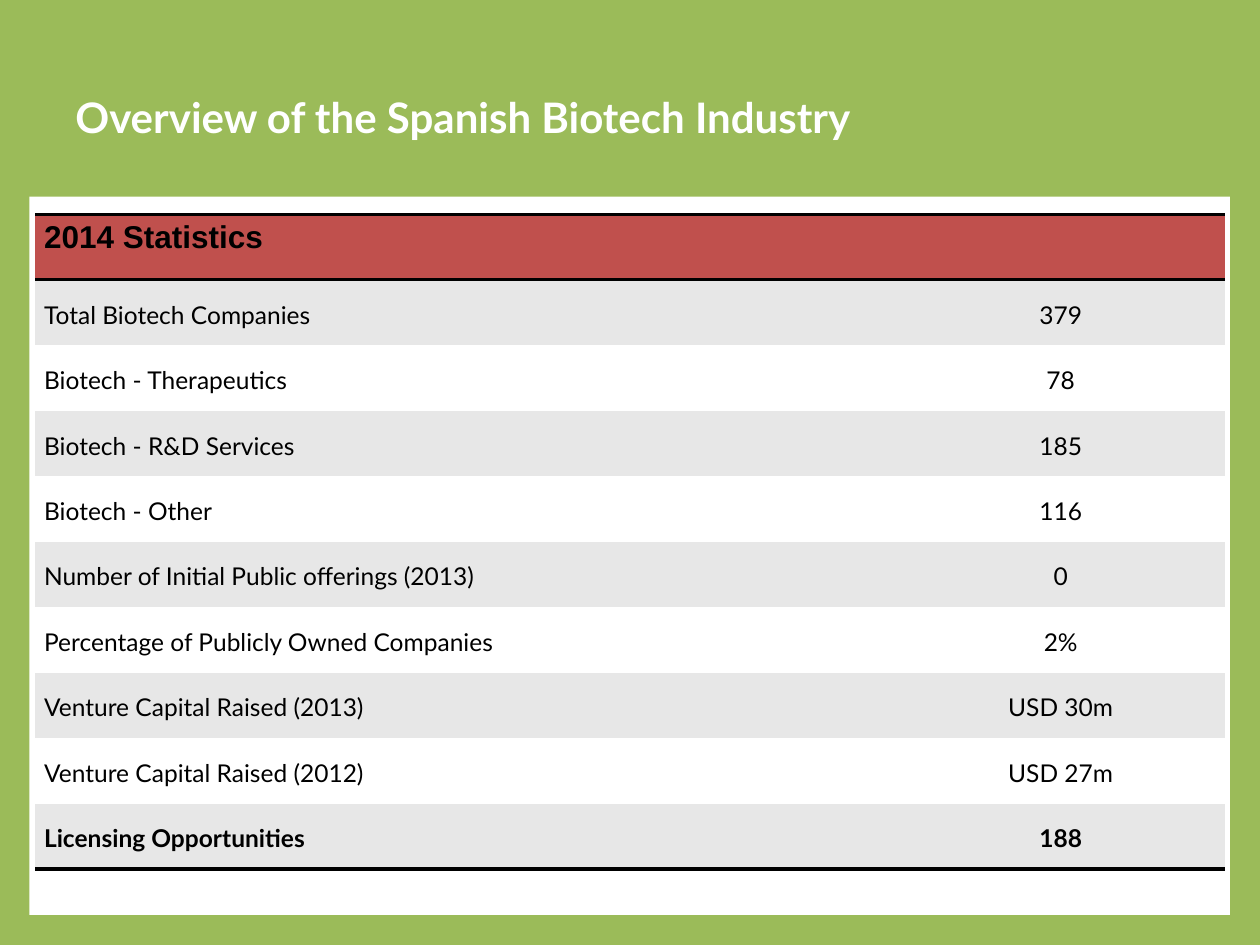
from dataclasses import dataclass

from lxml.etree import SubElement
from pptx import Presentation
from pptx.dml.color import RGBColor
from pptx.enum.shapes import MSO_SHAPE as Shape
from pptx.enum.text import MSO_ANCHOR as Anchor, PP_ALIGN as Align
from pptx.oxml.ns import qn
from pptx.util import Pt

GREEN = RGBColor(0x9B, 0xBB, 0x59)
RED = RGBColor(0xC0, 0x50, 0x4D)
GREY = RGBColor(0xE7, 0xE7, 0xE7)
WHITE = RGBColor(0xFF, 0xFF, 0xFF)
BLACK = RGBColor(0, 0, 0)

NO_GRID_STYLE = "{2D5ABB26-0587-4C30-8999-92F81FD0307C}"
COLUMN_WIDTHS = (492, 188)
ROW_HEIGHT = 37.44


@dataclass
class Statistic:
    label: str
    value: str
    bold: bool = False


STATISTICS = [
    Statistic("Total Biotech Companies", "379"),
    Statistic("Biotech - Therapeutics", "78"),
    Statistic("Biotech - R&D Services", "185"),
    Statistic("Biotech - Other", "116"),
    Statistic("Number of Initial Public offerings (2013)", "0"),
    Statistic("Percentage of Publicly Owned Companies", "2%"),
    Statistic("Venture Capital Raised (2013)", "USD 30m"),
    Statistic("Venture Capital Raised (2012)", "USD 27m"),
    Statistic("Licensing Opportunities", "188", bold=True),
]


def write(frame, text: str, *, size: float, font: str = "Lato", color: RGBColor = BLACK,
          bold: bool = False, align: Align = Align.LEFT, spacing: float = 1.0) -> None:
    para = frame.paragraphs[0]
    para.alignment = align
    para.line_spacing = spacing
    span = para.add_run()
    span.text = text
    span.font.name = font
    span.font.size = Pt(size)
    span.font.bold = bold
    span.font.color.rgb = color


def add_rule(cell, side: str) -> None:
    """Draw a black cell border; side is T or B. Call before filling the cell."""
    line = SubElement(cell._tc.get_or_add_tcPr(), qn(f"a:ln{side}"), w=str(Pt(2)))
    fill = SubElement(line, qn("a:solidFill"))
    SubElement(fill, qn("a:srgbClr"), val=str(BLACK))


def style_cell(cell, fill: RGBColor, rules: str = "", anchor: Anchor = Anchor.MIDDLE) -> None:
    for side in rules:
        add_rule(cell, side)
    cell.fill.solid()
    cell.fill.fore_color.rgb = fill
    cell.vertical_anchor = anchor
    cell.margin_left = cell.margin_right = Pt(5.04)
    cell.margin_top = cell.margin_bottom = 0


def add_panel(page) -> None:
    panel = page.shapes.add_shape(Shape.RECTANGLE, Pt(16.8), Pt(112.4), Pt(686), Pt(410.4))
    panel.shadow.inherit = False
    panel.fill.solid()
    panel.fill.fore_color.rgb = WHITE
    panel.line.fill.background()


def add_title(page) -> None:
    box = page.shapes.add_textbox(Pt(36), Pt(21.6), Pt(648), Pt(90))
    box.text_frame.word_wrap = True
    box.text_frame.vertical_anchor = Anchor.MIDDLE
    write(box.text_frame, "Overview of the Spanish Biotech Industry",
          size=24, color=WHITE, bold=True)


def add_statistics(page) -> None:
    row_count = len(STATISTICS) + 1
    frame = page.shapes.add_table(row_count, len(COLUMN_WIDTHS), Pt(20.16), Pt(122.4),
                                  Pt(sum(COLUMN_WIDTHS)), Pt(ROW_HEIGHT * row_count))
    table = frame.table
    table.first_row = table.horz_banding = False
    table._tbl.tblPr.find(qn("a:tableStyleId")).text = NO_GRID_STYLE
    for column, width in zip(table.columns, COLUMN_WIDTHS):
        column.width = Pt(width)
    for row in table.rows:
        row.height = Pt(ROW_HEIGHT)

    for cell in table.rows[0].cells:
        style_cell(cell, RED, rules="TB", anchor=Anchor.TOP)
    write(table.cell(0, 0).text_frame, "2014 Statistics",
          size=18, font="Arial", bold=True, spacing=1.15)

    for number, statistic in enumerate(STATISTICS, start=1):
        fill = GREY if number % 2 else WHITE
        rules = "B" if number == len(STATISTICS) else ""
        entries = ((statistic.label, Align.LEFT), (statistic.value, Align.CENTER))
        for cell, (text, align) in zip(table.rows[number].cells, entries):
            style_cell(cell, fill, rules)
            write(cell.text_frame, text, size=14, bold=statistic.bold,
                  align=align, spacing=1.15)


def main() -> None:
    deck = Presentation()
    deck.slide_width, deck.slide_height = Pt(720), Pt(540)
    page = deck.slides.add_slide(deck.slide_layouts[6])
    page.background.fill.solid()
    page.background.fill.fore_color.rgb = GREEN
    add_panel(page)
    add_title(page)
    add_statistics(page)
    deck.save("out.pptx")


if __name__ == "__main__":
    main()
